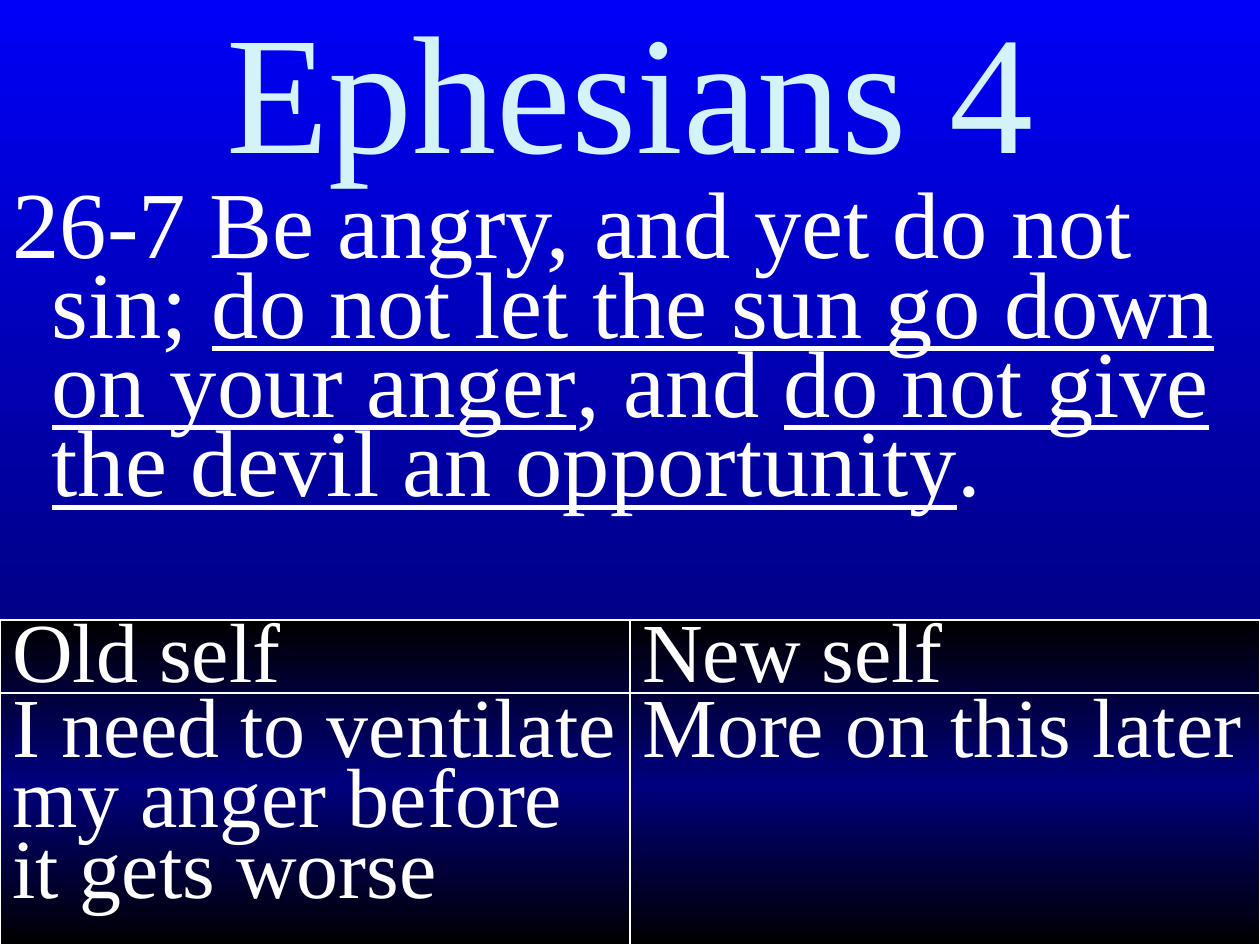
from dataclasses import dataclass
from typing import Any

from lxml.etree import SubElement as Sub
from pptx import Presentation as Deck
from pptx.dml.color import RGBColor as Rgb
from pptx.enum.shapes import MSO_CONNECTOR as Link, MSO_SHAPE as Form
from pptx.enum.text import MSO_ANCHOR as Anchor, MSO_AUTO_SIZE as Fit, PP_ALIGN as Align
from pptx.oxml.ns import qn
from pptx.util import Inches, Pt

HUES = {
    "top": "0000F8",
    "base": "00004A",
    "dark": "000000",
    "glow": "00007E",
    "title": "D3F3F9",
    "text": "FFFFFF",
}
FACE = "Times New Roman"
FLOOR = 7.5
WIDE = 10
HEAD = 4.92


@dataclass
class Panel:
    name: str
    note: str


@dataclass
class Style:
    size: int
    hue: str
    lead: float
    gap: float
    align: Any = Align.LEFT


TITLE = Style(96, "title", 0.8, 0, Align.CENTER)
VERSE = Style(54, "text", 0.7, 2.7)
CELL = Style(48, "text", 0.7, 2.4)

PANELS = [
    Panel("Old self", "I need to ventilate my anger before it gets worse"),
    Panel("New self", "More on this later"),
]
WORDS = [
    ("26-7 Be angry, and yet do not sin; ", False),
    ("do not let the sun go down on your anger", True),
    (", and ", False),
    ("do not give the devil an opportunity", True),
    (".", False),
]


def apply(item: Any, vals: dict[str, Any]) -> None:
    for key, val in vals.items():
        setattr(item, key, val)


def place(shape: Any, x: float, y: float, w: float, h: float) -> None:
    apply(shape, {"left": Inches(x), "top": Inches(y),
                  "width": Inches(w), "height": Inches(h)})


def shade(fill: Any, root: Any, hues: list[str]) -> None:
    fill.gradient()
    fill.gradient_angle = 270
    stops = root.find(".//" + qn("a:gsLst"))
    for old in list(stops):
        stops.remove(old)
    for i, hue in enumerate(hues):
        stop = Sub(stops, qn("a:gs"), pos=str(i * 100000 // (len(hues) - 1)))
        Sub(stop, qn("a:srgbClr"), val=HUES[hue])


def setup(frame: Any, anchor: Any) -> None:
    apply(frame, {
        "word_wrap": True, "auto_size": Fit.NONE, "vertical_anchor": anchor,
        "margin_left": Inches(0.1), "margin_right": Inches(0.1),
        "margin_top": Inches(0.05), "margin_bottom": Inches(0.05),
    })


def write(para: Any, runs: list[tuple[str, bool]], style: Style) -> None:
    apply(para, {"alignment": style.align, "line_spacing": style.lead,
                 "space_before": Pt(style.gap)})
    for text, under in runs:
        run = para.add_run()
        run.text = text
        apply(run.font, {"name": FACE, "size": Pt(style.size), "underline": under})
        run.font.color.rgb = Rgb.from_string(HUES[style.hue])


def stroke(line: Any, width: float) -> None:
    line.color.rgb = Rgb.from_string(HUES["text"])
    line.width = Pt(width)


def draw(slide: Any, panel: Panel, x: float, w: float) -> None:
    box = slide.shapes.add_shape(Form.RECTANGLE, Inches(x), Inches(HEAD),
                                 Inches(w), Inches(FLOOR - HEAD))
    box.shadow.inherit = False
    shade(box.fill, box.element, ["dark", "glow", "dark"])
    stroke(box.line, 1)
    frame = box.text_frame
    setup(frame, Anchor.TOP)
    write(frame.paragraphs[0], [(panel.name, False)], CELL)
    write(frame.add_paragraph(), [(panel.note, False)], CELL)


def main() -> None:
    deck = Deck()
    apply(deck, {"slide_width": Inches(WIDE), "slide_height": Inches(FLOOR)})
    slide = deck.slides.add_slide(deck.slide_layouts[1])
    shade(slide.background.fill, slide.element, ["top", "base"])

    title, body = slide.placeholders
    place(title, 0, 0, WIDE, 1.67)
    setup(title.text_frame, Anchor.MIDDLE)
    write(title.text_frame.paragraphs[0], [("Ephesians 4", False)], TITLE)

    place(body, 0, 1.5, WIDE, 5.33)
    setup(body.text_frame, Anchor.TOP)
    verse = body.text_frame.paragraphs[0]
    write(verse, WORDS, VERSE)
    props = verse._p.get_or_add_pPr()
    props.set("marL", str(Inches(0.31)))
    props.set("indent", str(Inches(-0.31)))
    Sub(props, qn("a:buNone"))

    w = WIDE / len(PANELS)
    for i, panel in enumerate(PANELS):
        draw(slide, panel, i * w, w)

    rule = slide.shapes.add_connector(Link.STRAIGHT, 0, Inches(5.5),
                                      Inches(WIDE), Inches(5.5))
    stroke(rule.line, 1.5)
    Sub(rule.element.spPr, qn("a:effectLst"))
    deck.save("out.pptx")


if __name__ == "__main__":
    main()
